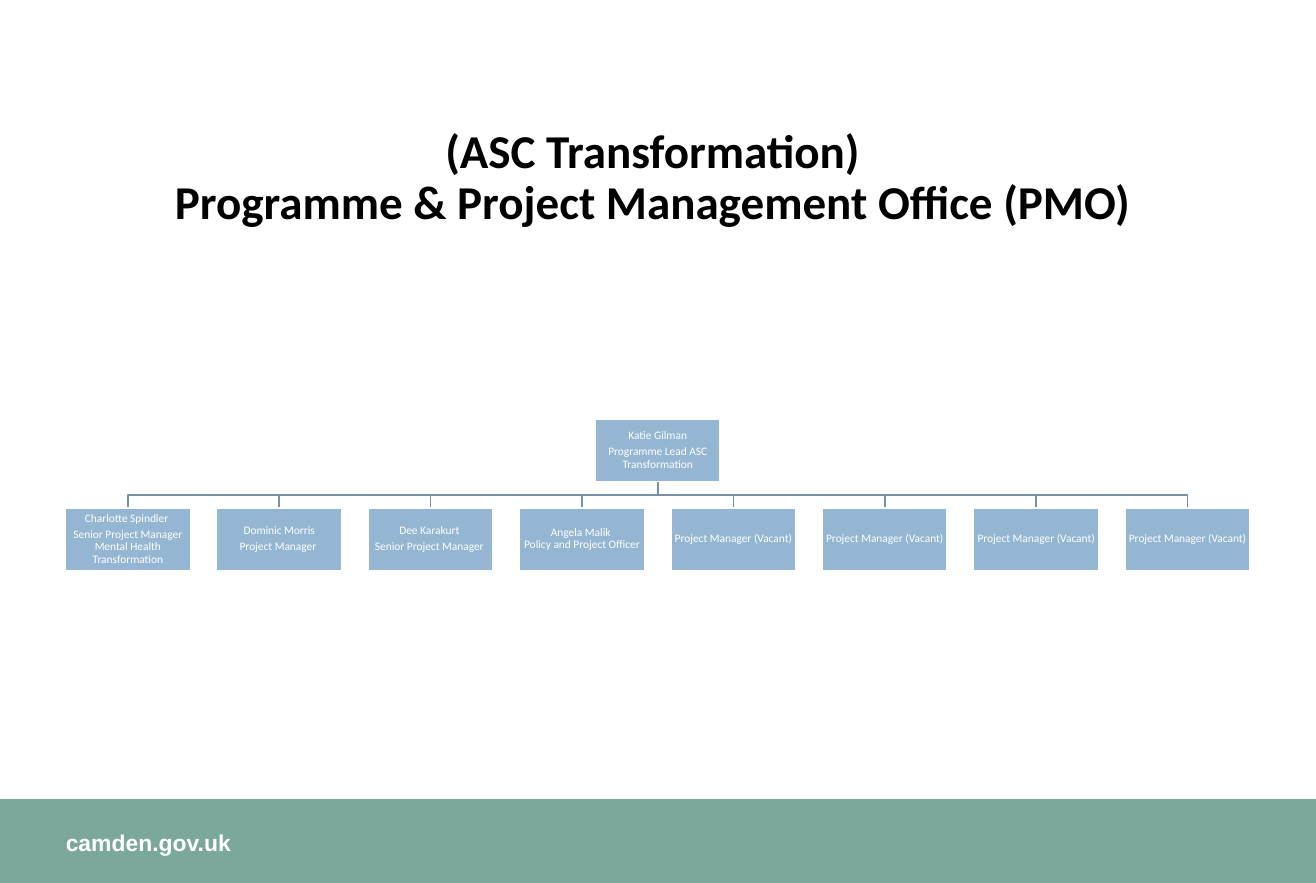
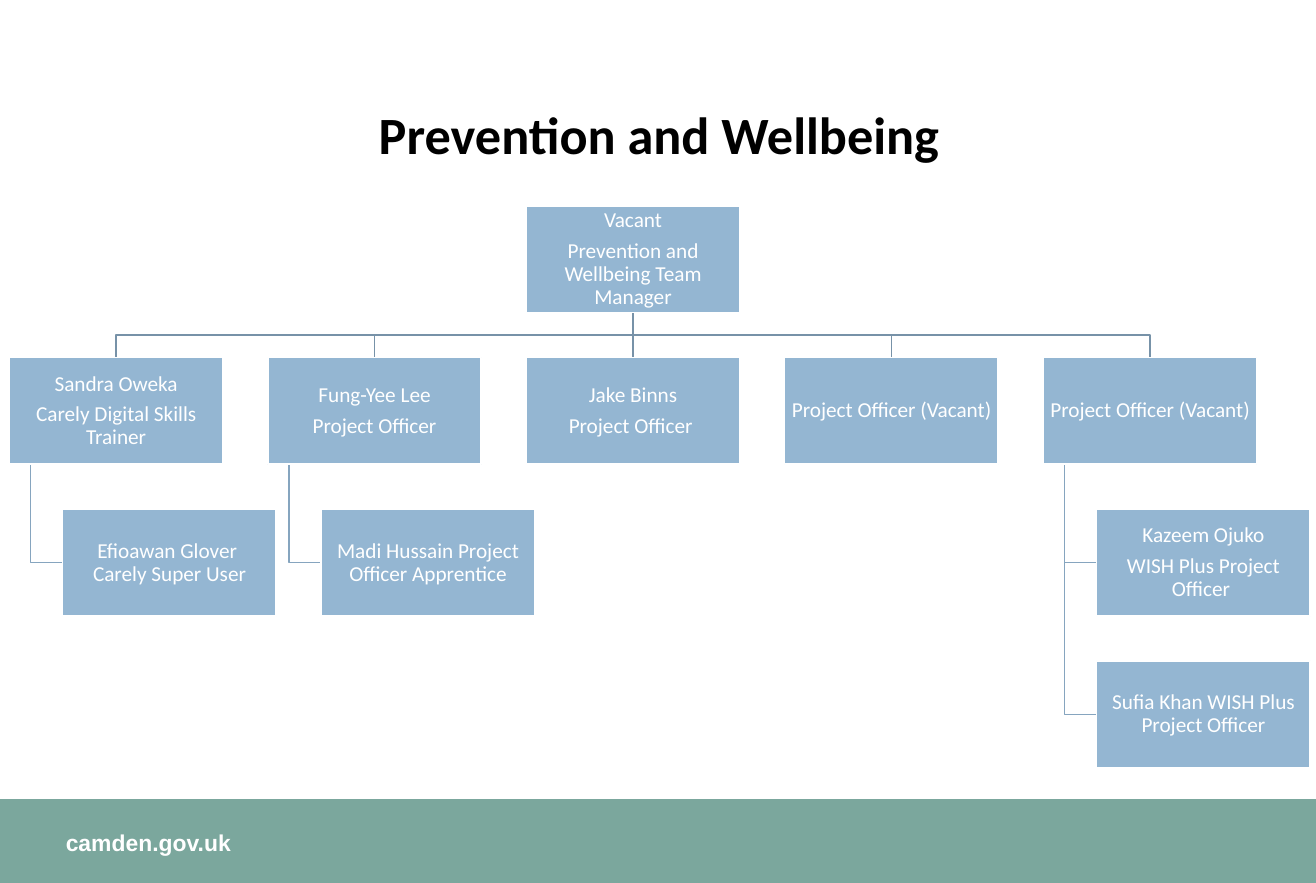
import pptx
import pptx.dml.color
import pptx.enum.shapes
import pptx.enum.text
import pptx.util

Cm = pptx.util.Cm
Pt = pptx.util.Pt
RGBColor = pptx.dml.color.RGBColor
MSO_ANCHOR = pptx.enum.text.MSO_ANCHOR
PP_ALIGN = pptx.enum.text.PP_ALIGN

WHITE = RGBColor(0xFF, 0xFF, 0xFF)
BLACK = RGBColor(0x00, 0x00, 0x00)
BAND_GREEN = RGBColor(0x7B, 0xA7, 0x9D)
NODE_BLUE = RGBColor(0x94, 0xB6, 0xD2)
MEMBER_LINE = RGBColor(0x77, 0x92, 0xA8)
REPORT_LINE = RGBColor(0x86, 0xA5, 0xBF)

HEADING_FONT = "Calibri"
FOOTER_FONT = "Arial"
SLIDE_WIDTH = 28.4
SLIDE_HEIGHT = 19.05
BAND_HEIGHT = 1.81
LINE_SPACING = 0.9
TITLE_ONLY = 5

PMO_LEAD = "Katie Gilman\nProgramme Lead ASC Transformation"
PMO_MEMBERS = [
    ("Charlotte Spindler \nSenior Project Manager Mental Health Transformation", []),
    ("Dominic Morris\nProject Manager ", []),
    ("Dee Karakurt \nSenior Project Manager ", []),
    ("Angela Malik \vPolicy and Project Officer", []),
] + [("Project Manager (Vacant)", [])] * 4

WELLBEING_LEAD = "Vacant\nPrevention and Wellbeing Team Manager"
WELLBEING_MEMBERS = [
    ("Sandra Oweka\nCarely Digital Skills Trainer", ["Efioawan Glover \vCarely Super User"]),
    ("Fung-Yee Lee\nProject Officer", ["Madi Hussain Project Officer Apprentice"]),
    ("Jake Binns\nProject Officer ", []),
    ("Project Officer (Vacant)", []),
    (
        "Project Officer (Vacant)",
        ["Kazeem Ojuko\nWISH Plus Project Officer ", "Sufia Khan WISH Plus Project Officer"],
    ),
]


def set_margins(text_frame, margin):
    text_frame.margin_left = text_frame.margin_right = Cm(margin)
    text_frame.margin_top = text_frame.margin_bottom = Cm(margin)


def format_paragraphs(text_frame, font_name, size, color, bold=False):
    for paragraph in text_frame.paragraphs:
        paragraph.font.name = font_name
        paragraph.font.size = Pt(size)
        paragraph.font.bold = bold
        paragraph.font.color.rgb = color


def add_rectangle(slide, left, top, width, height, fill):
    shape = slide.shapes.add_shape(
        pptx.enum.shapes.MSO_SHAPE.RECTANGLE, Cm(left), Cm(top), Cm(width), Cm(height)
    )
    shape.shadow.inherit = False
    shape.fill.solid()
    shape.fill.fore_color.rgb = fill
    shape.line.fill.background()
    return shape


def add_elbow(slide, points, color):
    start, *corners = [(Cm(x), Cm(y)) for x, y in points]
    builder = slide.shapes.build_freeform(*start)
    builder.add_line_segments(corners, close=False)
    elbow = builder.convert_to_shape()
    elbow.shadow.inherit = False
    elbow.fill.background()
    elbow.line.color.rgb = color
    elbow.line.width = Pt(1)


def add_footer(slide, top):
    add_rectangle(slide, 0, top, SLIDE_WIDTH, BAND_HEIGHT, BAND_GREEN)
    text_box = slide.shapes.add_textbox(Cm(1.42), Cm(top + 0.64), Cm(11.7), Cm(0.6))
    text_frame = text_box.text_frame
    text_frame.word_wrap = True
    set_margins(text_frame, 0)
    text_frame.text = "camden.gov.uk"
    format_paragraphs(text_frame, FOOTER_FONT, 14, WHITE, bold=True)


def add_title(slide, text, left, top, width, height, size):
    title = slide.shapes.title
    title.left, title.top = Cm(left), Cm(top)
    title.width, title.height = Cm(width), Cm(height)
    text_frame = title.text_frame
    text_frame.text = text
    text_frame.word_wrap = True
    text_frame.auto_size = pptx.enum.text.MSO_AUTO_SIZE.NONE
    text_frame.vertical_anchor = MSO_ANCHOR.MIDDLE
    format_paragraphs(text_frame, HEADING_FONT, size, BLACK, bold=True)
    for paragraph in text_frame.paragraphs:
        paragraph.alignment = PP_ALIGN.CENTER
        paragraph.line_spacing = LINE_SPACING


def add_node(slide, text, left, top, width, height, size):
    node = add_rectangle(slide, left, top, width, height, NODE_BLUE)
    node.line.color.rgb = WHITE
    node.line.width = Pt(1)
    text_frame = node.text_frame
    text_frame.word_wrap = True
    text_frame.vertical_anchor = MSO_ANCHOR.MIDDLE
    set_margins(text_frame, 0.02)
    text_frame.text = text
    format_paragraphs(text_frame, HEADING_FONT, size, WHITE)
    for paragraph in text_frame.paragraphs:
        paragraph.alignment = PP_ALIGN.CENTER
        paragraph.line_spacing = LINE_SPACING
        paragraph.space_after = Pt(0.35 * size)


def add_organisation_chart(slide, lead, members, left, top, node_width, size):
    node_height = node_width / 2
    gap = node_width * 0.21
    column_pitch = node_width + gap
    row_pitch = node_height + gap
    member_top = top + row_pitch
    member_bottom = member_top + node_height
    lead_bottom = top + node_height
    bar_y = member_top - gap / 2
    lead_left = left + (len(members) - 1) * column_pitch / 2
    lead_center = lead_left + node_width / 2
    nodes = [(lead, lead_left, top)]

    for index, (member, reports) in enumerate(members):
        column = left + index * column_pitch
        center = column + node_width / 2
        corners = [(lead_center, bar_y), (center, bar_y)]
        if abs(center - lead_center) < 0.01:
            corners = []
        add_elbow(slide, [(lead_center, lead_bottom), *corners, (center, member_top)], MEMBER_LINE)
        nodes.append((member, column, member_top))
        stem_x = column + node_width / 10
        report_left = column + node_width / 4
        for level, report in enumerate(reports, start=1):
            report_top = member_top + level * row_pitch
            report_y = report_top + node_height / 2
            points = [(stem_x, member_bottom), (stem_x, report_y), (report_left, report_y)]
            add_elbow(slide, points, REPORT_LINE)
            nodes.append((report, report_left, report_top))

    for text, node_left, node_top in nodes:
        add_node(slide, text, node_left, node_top, node_width, node_height, size)


def add_base_slide(presentation):
    slide = presentation.slides.add_slide(presentation.slide_layouts[TITLE_ONLY])
    add_footer(slide, SLIDE_HEIGHT - BAND_HEIGHT)
    return slide


def main():
    presentation = pptx.Presentation()
    presentation.slide_width = Cm(SLIDE_WIDTH)
    presentation.slide_height = Cm(SLIDE_HEIGHT)

    slide = add_base_slide(presentation)
    title = "(ASC Transformation) \vProgramme & Project Management Office (PMO) "
    add_title(slide, title, 0.71, 2.82, 26.98, 2.08, 28.8)
    add_organisation_chart(slide, PMO_LEAD, PMO_MEMBERS, 1.41, 9.04, 2.7, 7)

    slide = add_base_slide(presentation)
    add_title(slide, "Prevention and Wellbeing", 1.45, 1.37, 25.55, 3.18, 32)
    add_organisation_chart(slide, WELLBEING_LEAD, WELLBEING_MEMBERS, 0.2, 4.44, 4.61, 13)

    presentation.save("out.pptx")


if __name__ == "__main__":
    main()
